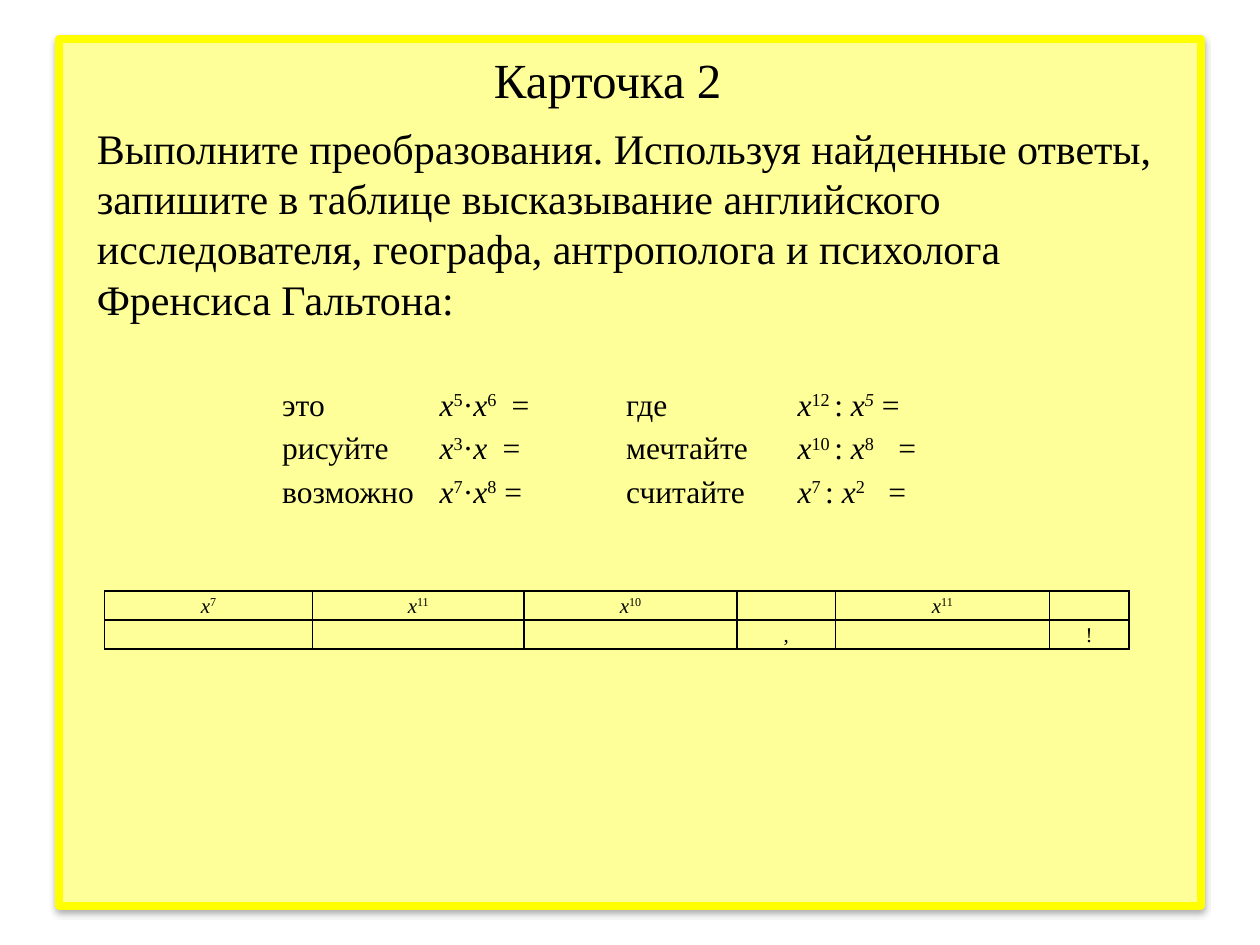
from dataclasses import dataclass

from lxml import etree
from pptx import Presentation
from pptx.dml.color import RGBColor
from pptx.enum.shapes import MSO_SHAPE
from pptx.enum.text import MSO_ANCHOR, PP_ALIGN
from pptx.oxml.ns import qn
from pptx.util import Inches, Pt

RECT = MSO_SHAPE.RECTANGLE
TOP = MSO_ANCHOR.TOP
LEFT, CENTER = PP_ALIGN.LEFT, PP_ALIGN.CENTER
TITLE_ONLY = 5
NO_STYLE = "{2D5ABB26-0587-4C30-8999-92F81FD0307C}"


@dataclass(frozen=True)
class Theme:
    font: str = "Times New Roman"
    ink: str = "000000"
    card: str = "FFFF99"
    edge: str = "FFFF00"
    title: int = 28
    body: int = 24
    task: int = 18
    answer: int = 12


THEME = Theme()


def rgb(value):
    return RGBColor.from_string(value)


def power(exponent, italic=False):
    """Runs for x raised to an exponent, as (text, italic, raised)."""
    return [("х", True, False), (exponent, italic, True)]


def plain(text):
    return [(text, False, False)]


def add_runs(p, runs, size):
    for text, italic, raised in runs:
        r = p.add_run()
        r.text = text
        values = {"name": THEME.font, "size": Pt(size), "italic": italic}
        for name, value in values.items():
            setattr(r.font, name, value)
        r.font.color.rgb = rgb(THEME.ink)
        if raised:
            r.font._element.set("baseline", "30000")


def add_card(slide):
    sp = slide.shapes.add_shape(RECT, Inches(0.47), Inches(0.31), Inches(9.06), Inches(6.88))
    sp.fill.solid()
    sp.fill.fore_color.rgb = rgb(THEME.card)
    sp.line.color.rgb = rgb(THEME.edge)
    sp.line.width = Pt(4.5)
    sp.shadow.inherit = False
    effects = sp._element.spPr.find(qn("a:effectLst"))
    shadow = etree.SubElement(effects, qn("a:outerShdw"), blurRad=str(Pt(3.5)),
                              dist=str(Pt(2.2)), dir="5400000", rotWithShape="0")
    color = etree.SubElement(shadow, qn("a:srgbClr"), val=THEME.ink)
    etree.SubElement(color, qn("a:alpha"), val="32000")
    slide.shapes._spTree.insert(2, sp._element)  # behind the title


def fill_text(sp, text, size):
    tf = sp.text_frame
    tf.word_wrap = True
    tf.vertical_anchor = TOP
    p = tf.paragraphs[0]
    p.alignment = LEFT
    add_runs(p, plain(text), size)


def add_title(slide, text):
    sp = slide.shapes.title
    box = {"left": 3.82, "top": 0.34, "width": 3.54, "height": 0.57}
    for name, value in box.items():
        setattr(sp, name, Inches(value))
    fill_text(sp, text, THEME.title)


def add_text(slide, left, top, width, height, text):
    sp = slide.shapes.add_textbox(Inches(left), Inches(top), Inches(width), Inches(height))
    fill_text(sp, text, THEME.body)


def add_borders(cell):
    tcPr = cell._tc.get_or_add_tcPr()
    for side in ("lnL", "lnR", "lnT", "lnB"):
        ln = etree.SubElement(tcPr, qn(f"a:{side}"), w=str(Pt(1)))
        fill = etree.SubElement(ln, qn("a:solidFill"))
        etree.SubElement(fill, qn("a:srgbClr"), val=THEME.ink)


def add_tab_stop(p, position):
    tabs = etree.SubElement(p._p.get_or_add_pPr(), qn("a:tabLst"))
    etree.SubElement(tabs, qn("a:tab"), pos=str(Inches(position)), algn="l")


def fill_cell(cell, runs, size, align, tab=None, bordered=False):
    if bordered:
        add_borders(cell)
    cell.fill.background()
    margins = {"margin_left": 0.07, "margin_right": 0.07, "margin_top": 0, "margin_bottom": 0}
    for name, value in margins.items():
        setattr(cell, name, Inches(value))
    p = cell.text_frame.paragraphs[0]
    p.alignment = align
    p.line_spacing = 1.15
    if tab:
        add_tab_stop(p, tab)
    add_runs(p, runs, size)
    if not runs:  # keeps an empty row as low as a filled one
        etree.SubElement(p._p, qn("a:endParaRPr"), sz=str(size * 100))


def add_grid(slide, left, top, columns, row_height, rows, size, align, bordered=False):
    """Add a table whose cells are (runs, tab position) pairs."""
    frame = slide.shapes.add_table(len(rows), len(columns), Inches(left), Inches(top),
                                   Inches(sum(columns)), Inches(row_height * len(rows)))
    table = frame.table
    table.first_row = table.horz_banding = False
    table._tbl.tblPr.find(qn("a:tableStyleId")).text = NO_STYLE
    for column, width in zip(table.columns, columns):
        column.width = Inches(width)
    for i, row in enumerate(rows):
        table.rows[i].height = Inches(row_height)
        for j, (runs, tab) in enumerate(row):
            fill_cell(table.cell(i, j), runs, size, align, tab, bordered)


def word(text):
    return plain(text), None


def task(first, sign, second, tab=None):
    """An expression; a tab position sets its equals sign apart."""
    return first + plain(sign) + second + plain("\t=" if tab else " ="), tab


def main():
    prs = Presentation()
    prs.slide_width, prs.slide_height = Inches(10), Inches(7.5)
    slide = prs.slides.add_slide(prs.slide_layouts[TITLE_ONLY])
    add_card(slide)
    add_title(slide, "Карточка 2")
    add_text(slide, 0.67, 0.92, 8.82, 1.72,
             "Выполните преобразования. Используя найденные ответы, запишите в таблице "
             "высказывание английского исследователя, географа, антрополога и психолога "
             "Френсиса Гальтона:")

    tasks = [
        [word("это"), task(power("5"), "·", power("6"), 0.57),
         word("где"), task(power("12 "), ": ", power("5", italic=True))],
        [word("рисуйте"), task(power("3"), "·", [("х", True, False)], 0.5),
         word("мечтайте"), task(power("10 "), ": ", power("8"), 0.8)],
        [word("возможно"), task(power("7"), "·", power("8")),
         word("считайте"), task(power("7 "), ": ", power("2"), 0.72)],
    ]
    add_grid(slide, 2.17, 3.04, [1.25, 1.48, 1.36, 1.5], 0.32, tasks, THEME.task, LEFT)

    blank = ([], None)
    answers = [
        [(power(n), None) if n else blank for n in ("7", "11", "10", "", "11", "")],
        [word(mark) if mark else blank for mark in ("", "", "", ",", "", "!")],
    ]
    add_grid(slide, 0.83, 4.69, [1.65, 1.68, 1.69, 0.78, 1.7, 0.63], 0.21, answers,
             THEME.answer, CENTER, bordered=True)
    prs.save("out.pptx")


if __name__ == "__main__":
    main()
